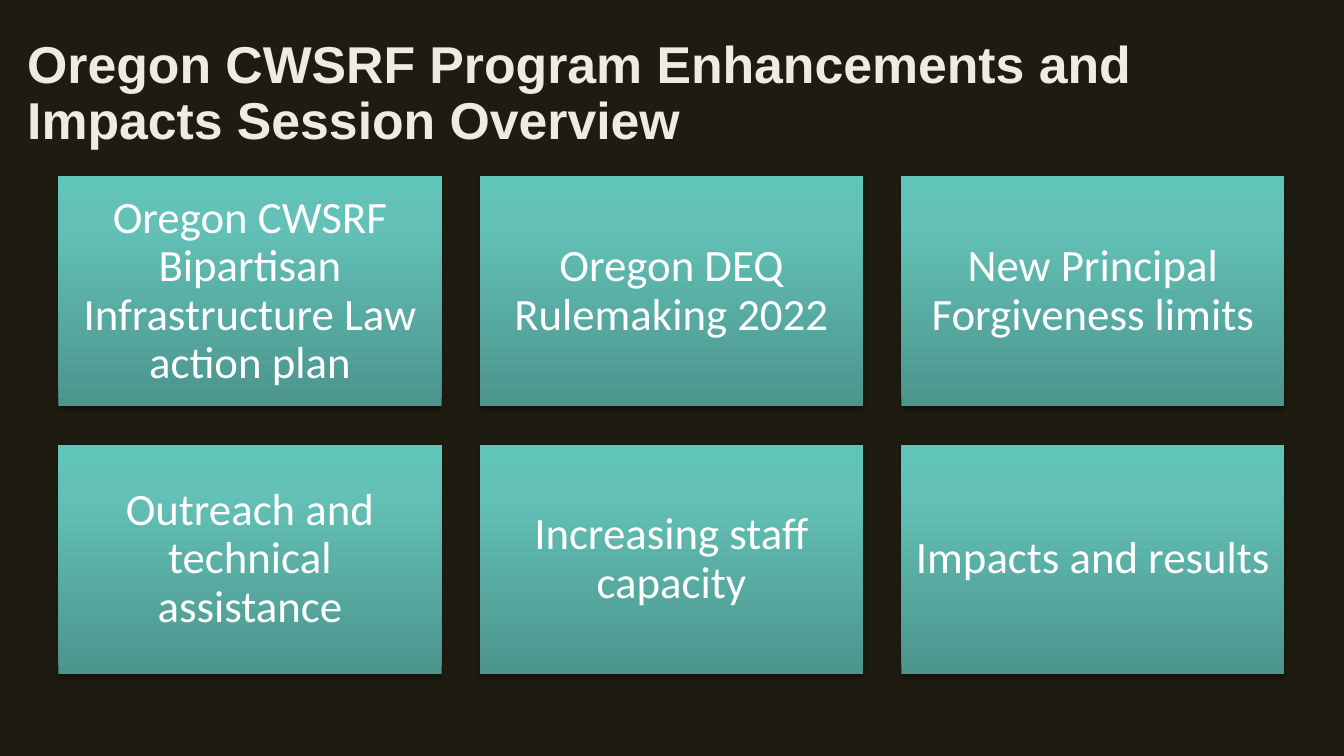
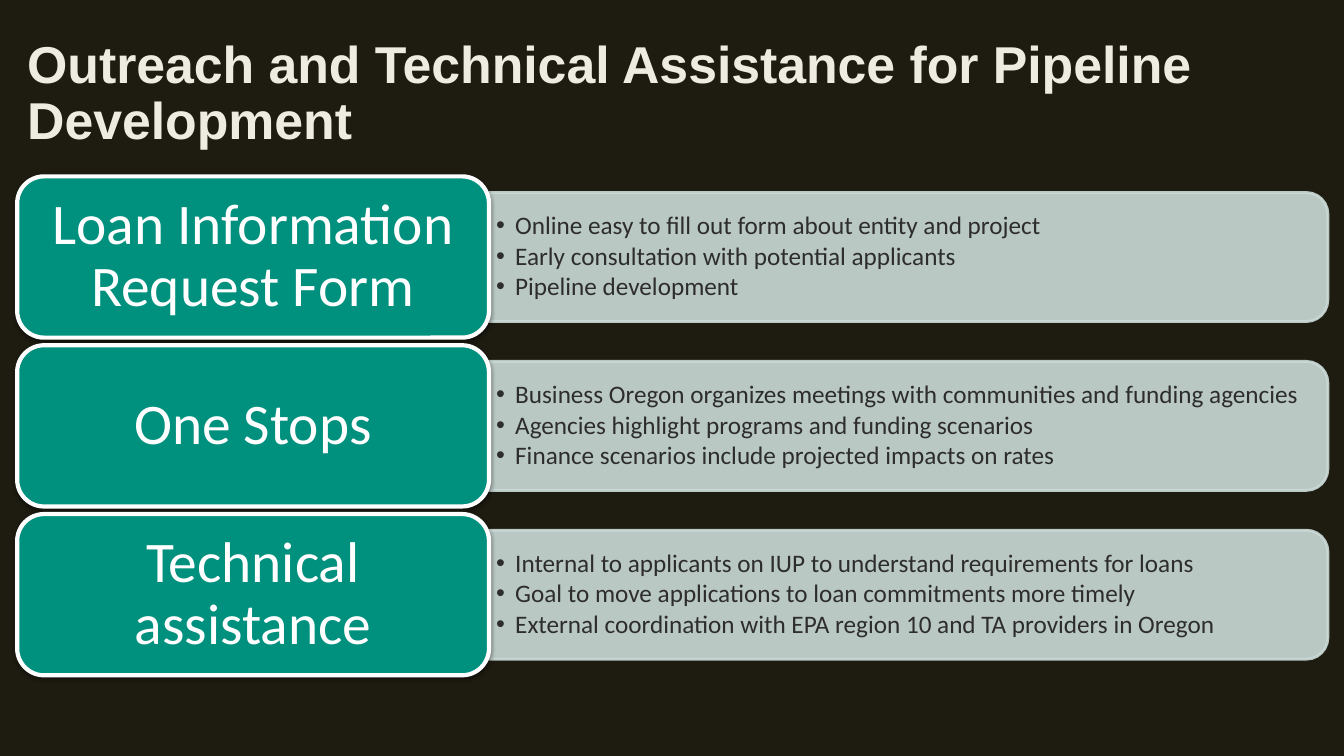
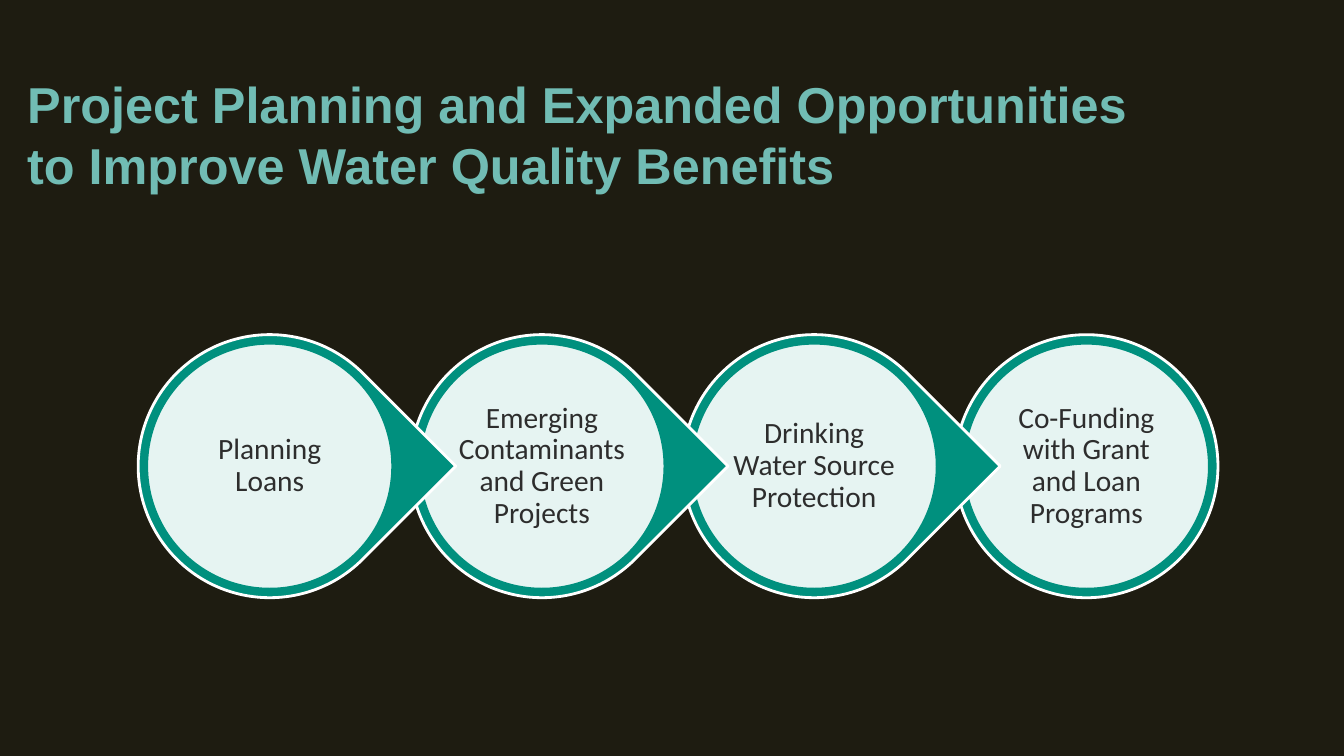
from copy import deepcopy

from lxml import etree
from pptx import Presentation
from pptx.dml.color import RGBColor
from pptx.enum import shapes, text
from pptx.oxml.ns import qn
from pptx.util import Inches, Pt

COLORS = {
    "background": "1E1C11", "title": "EEECE1", "title_teal": "71BCB4",
    "white": "FFFFFF", "black": "000000", "ink": "2D2D2D",
    "teal": "00907E", "bar": "CCDBD8",
}
TILE_STOPS = [(0, "4C958D"), (0.8, "63C1B7"), (1, "61C4B9")]

OVERVIEW_TITLE = "Oregon CWSRF Program Enhancements and Impacts Session Overview"
TOPICS = [
    "Oregon CWSRF Bipartisan Infrastructure Law action plan",
    "Oregon DEQ Rulemaking 2022",
    "New Principal Forgiveness limits",
    "Outreach and technical assistance",
    "Increasing staff capacity",
    "Impacts and results",
]

OUTREACH_TITLE = "Outreach and Technical Assistance for Pipeline Development"
OUTREACH = [
    ("Loan Information Request Form", [
        "Online easy to fill out form about entity and project",
        "Early consultation with potential applicants",
        "Pipeline development",
    ]),
    ("One Stops", [
        "Business Oregon organizes meetings with communities and funding agencies",
        "Agencies highlight programs and funding scenarios",
        "Finance scenarios include projected impacts on rates",
    ]),
    ("Technical assistance", [
        "Internal to applicants on IUP to understand requirements for loans",
        "Goal to move applications to loan commitments more timely",
        "External coordination with EPA region 10 and TA providers in Oregon",
    ]),
]

PLANNING_TITLE = "Project Planning and Expanded Opportunities\vto Improve Water Quality Benefits"
OPPORTUNITIES = [
    "Planning Loans",
    "Emerging Contaminants and Green Projects",
    "Drinking Water Source Protection",
    "Co-Funding with Grant and Loan Programs",
]


def rgb(name):
    return RGBColor.from_string(COLORS[name])


def set_font(p, size, color, name="Calibri", bold=False):
    p.font.size = Pt(size)
    p.font.name = name
    p.font.bold = bold
    p.font.color.rgb = rgb(color)


def set_frame(tf, x_inset, y_inset):
    tf.word_wrap = True
    tf.auto_size = text.MSO_AUTO_SIZE.NONE
    tf.vertical_anchor = text.MSO_ANCHOR.MIDDLE
    tf.margin_left = tf.margin_right = Inches(x_inset)
    tf.margin_top = tf.margin_bottom = Inches(y_inset)


def set_label(sp, label, size, color, x_inset, y_inset):
    set_frame(sp.text_frame, x_inset, y_inset)
    p = sp.text_frame.paragraphs[0]
    p.text = label
    p.alignment = text.PP_ALIGN.CENTER
    p.line_spacing = 0.9
    set_font(p, size, color)


def add_alpha(parent, percent):
    for color in list(parent.iter(qn("a:srgbClr"))):
        etree.SubElement(color, qn("a:alpha"), val=str(percent * 1000))


def add_shape(slide, kind, left, top, width, height, fill=None, line=None, line_width=2):
    sp = slide.shapes.add_shape(
        kind, Inches(left), Inches(top), Inches(width), Inches(height))
    sp.shadow.inherit = False
    if fill:
        sp.fill.solid()
        sp.fill.fore_color.rgb = rgb(fill)
    if line:
        sp.line.color.rgb = rgb(line)
        sp.line.width = Pt(line_width)
    else:
        sp.line.fill.background()
    return sp


def add_shadow(sp, distance, percent):
    effects = sp._element.spPr.find(qn("a:effectLst"))
    shadow = etree.SubElement(
        effects, qn("a:outerShdw"), blurRad=str(Pt(3.1)), dist=str(Pt(distance)),
        dir="5400000", rotWithShape="0")
    etree.SubElement(shadow, qn("a:srgbClr"), val=COLORS["black"])
    add_alpha(shadow, percent)


def fill_gradient(sp, stops):
    sp.fill.gradient()
    sp.fill.gradient_angle = 90
    stop_list = sp._element.spPr.find(".//" + qn("a:gsLst"))
    while len(stop_list) < len(stops):
        stop_list.append(deepcopy(stop_list[0]))
    for stop, (position, color) in zip(sp.fill.gradient_stops, stops):
        stop.position = position
        stop.color.rgb = RGBColor.from_string(color)


def add_slide(prs, title, height=1.22, size=37, color="title", spacing=0.9):
    slide = prs.slides.add_slide(prs.slide_layouts[5])
    sp = slide.shapes.title
    sp.left, sp.top, sp.width, sp.height = (
        Inches(v) for v in (0.17, 0.33, 13, height))
    set_frame(sp.text_frame, 0.1, 0.05)
    p = sp.text_frame.paragraphs[0]
    p.text = title
    p.alignment = text.PP_ALIGN.LEFT
    p.line_spacing = spacing
    set_font(p, size, color, "Arial", True)
    return slide


def add_bullets(slide, items, left, top, width, height):
    box = slide.shapes.add_textbox(
        Inches(left), Inches(top), Inches(width), Inches(height))
    tf = box.text_frame
    set_frame(tf, 0.07, 0.04)
    for i, item in enumerate(items):
        p = tf.paragraphs[0] if i == 0 else tf.add_paragraph()
        p.text = item
        p.line_spacing = 0.9
        p.space_after = Pt(2.5)
        props = p._p.get_or_add_pPr()
        props.set("marL", str(Inches(0.19)))
        props.set("indent", str(-Inches(0.19)))
        etree.SubElement(props, qn("a:buFont"), typeface="Arial")
        etree.SubElement(props, qn("a:buChar"), char="•")
        set_font(p, 18, "ink")


def build_overview(prs):
    slide = add_slide(prs, OVERVIEW_TITLE)
    width, height, gap, columns = 3.8, 2.28, 0.38, 3
    for i, topic in enumerate(TOPICS):
        row, column = divmod(i, columns)
        tile = add_shape(
            slide, shapes.MSO_SHAPE.RECTANGLE, 0.58 + column * (width + gap),
            1.75 + row * (height + gap), width, height)
        fill_gradient(tile, TILE_STOPS)
        add_shadow(tile, 1.8, 35)
        set_label(tile, topic, 32, "white", 0.13, 0.13)


def build_outreach(prs):
    slide = add_slide(prs, OUTREACH_TITLE)
    left, top, total_height = 0.17, 1.75, 4.95
    name_width, name_height = 4.68, 1.6
    bar_width, bar_height, text_height = 8.32, 1.28, 1.15
    pitch = (total_height - name_height) / (len(OUTREACH) - 1)
    bar_left = left + name_width
    for i, (name, items) in enumerate(OUTREACH):
        row_top = top + i * pitch
        middle = row_top + name_height / 2
        bar = add_shape(
            slide, shapes.MSO_SHAPE.ROUND_2_SAME_RECTANGLE,
            bar_left + (bar_width - bar_height) / 2, middle - bar_width / 2,
            bar_height, bar_width, "bar", "bar")
        bar.rotation = 90
        add_alpha(bar._element.spPr, 90)
        add_bullets(slide, items, bar_left, middle - text_height / 2,
                    bar_width - 0.06, text_height)
        pill = add_shape(
            slide, shapes.MSO_SHAPE.ROUNDED_RECTANGLE, left, row_top,
            name_width, name_height, "teal", "white", 3)
        add_shadow(pill, 1.6, 38)
        set_label(pill, name, 41, "white", 0.17, 0.09)


def build_planning(prs):
    slide = add_slide(prs, PLANNING_TITLE, 2, 36, "title_teal", 1)
    left, top, pitch, outer, inner = 1.37, 3.32, 2.7, 2.61, 2.44
    inset = (outer - inner) / 2
    last = len(OPPORTUNITIES) - 1
    for i in range(last, -1, -1):
        x = left + i * pitch
        kind = shapes.MSO_SHAPE.OVAL if i == last else shapes.MSO_SHAPE.TEAR
        ring = add_shape(slide, kind, x, top, outer, outer, "teal", "white")
        ring.rotation = 0 if i == last else 45
        disc = add_shape(slide, shapes.MSO_SHAPE.OVAL, x + inset, top + inset,
                         inner, inner, "white", "teal")
        add_alpha(disc._element.spPr.find(qn("a:solidFill")), 90)
        set_label(disc, OPPORTUNITIES[i], 21, "ink", 0.02, 0.02)


def main():
    prs = Presentation()
    prs.slide_width, prs.slide_height = Inches(13.33), Inches(7.5)
    fill = prs.slide_master.background.fill
    fill.solid()
    fill.fore_color.rgb = rgb("background")
    build_overview(prs)
    build_outreach(prs)
    build_planning(prs)
    prs.save("out.pptx")


if __name__ == "__main__":
    main()
